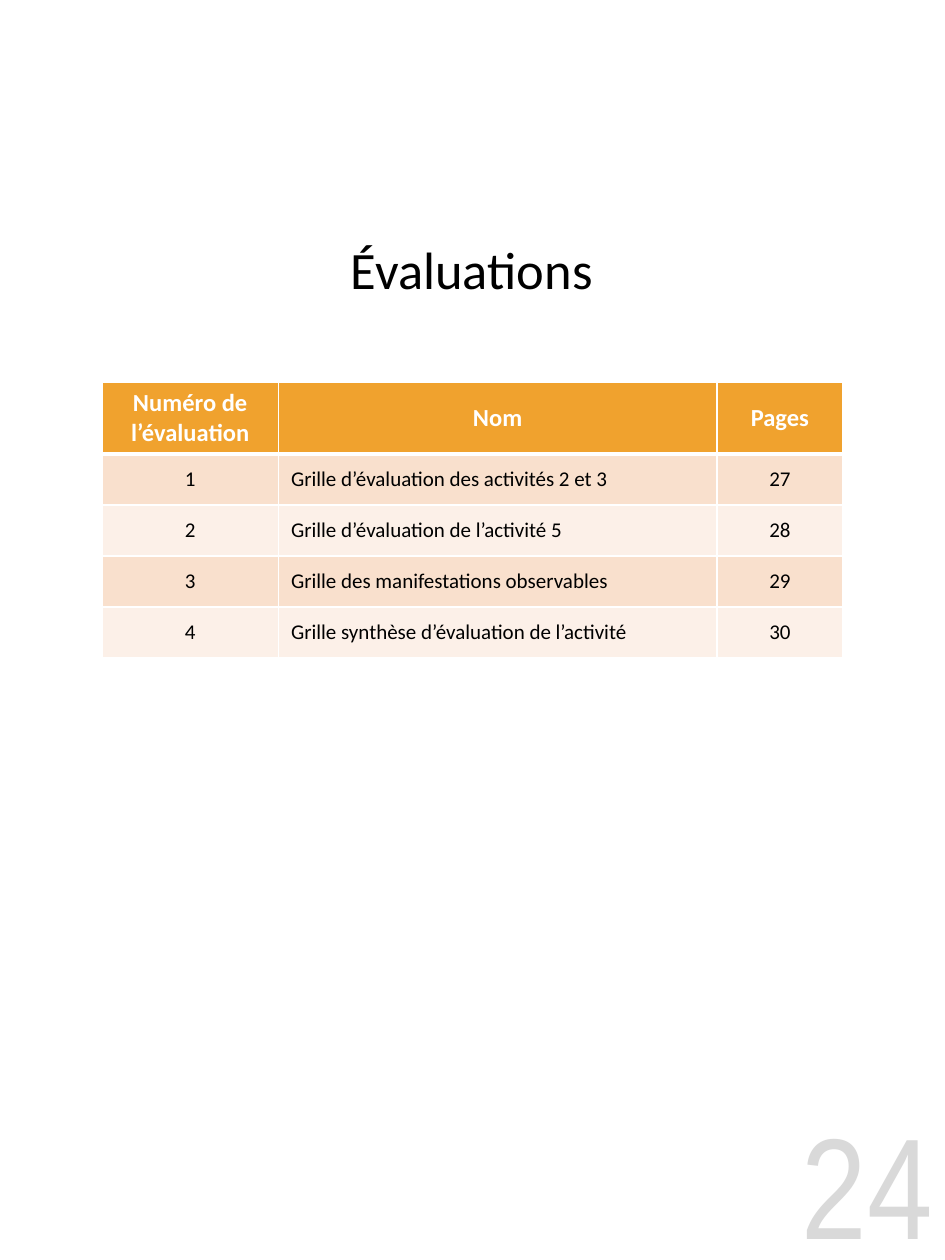
from lxml.etree import SubElement
from pptx import Presentation
from pptx.dml.color import RGBColor
from pptx.enum.text import MSO_AUTO_SIZE, MSO_ANCHOR as Anchor, PP_ALIGN as Align
from pptx.oxml.ns import qn
from pptx.util import Pt

BLACK = RGBColor(0x00, 0x00, 0x00)
WHITE = RGBColor(0xFF, 0xFF, 0xFF)
ORANGE = RGBColor(0xF0, 0xA2, 0x2E)
PEACH = RGBColor(0xF9, 0xE0, 0xCD)
CREAM = RGBColor(0xFC, 0xF0, 0xE8)
GREY = RGBColor(0xD9, 0xD9, 0xD9)

TITLE = "Évaluations"
PAGE_NUMBER = "24"
ROWS = [
    ("Numéro de\nl’évaluation", "Nom", "Pages"),
    ("1", "Grille d’évaluation des activités 2 et 3", "27"),
    ("2", "Grille d’évaluation de l’activité 5", "28"),
    ("3", "Grille des manifestations observables", "29"),
    ("4", "Grille synthèse d’évaluation de l’activité", "30"),
]
NAME_COLUMN = 1
COLUMN_WIDTHS = [100.8, 250.56, 72]
HEADER_HEIGHT, ROW_HEIGHT = 41.04, 29.16
TABLE_LEFT, TABLE_TOP = 58.32, 218.16
TITLE_BOX = (101.52, 123.84, 336.24, 59.76)
NUMBER_BOX = (416.88, 630.72, 123.12, 89.28)

TITLE_FONT = {"name": "Calibri", "size": Pt(30), "bold": False}
HEADER_FONT = {"name": "Calibri", "size": Pt(14), "bold": True}
BODY_FONT = {"name": "Calibri", "size": Pt(12), "bold": False}
NUMBER_FONT = {"name": "Arial Narrow", "size": Pt(82), "bold": False}


def write(text_frame, text, font_format, color, alignment):
    text_frame.text = text
    for paragraph in text_frame.paragraphs:
        paragraph.alignment = alignment
        for name, value in font_format.items():
            setattr(paragraph.font, name, value)
        paragraph.font.color.rgb = color


def place(shape, box):
    for name, value in zip(("left", "top", "width", "height"), box):
        setattr(shape, name, Pt(value))
    frame = shape.text_frame
    frame.word_wrap = True
    frame.auto_size = MSO_AUTO_SIZE.NONE
    frame.vertical_anchor = Anchor.MIDDLE


def add_borders(cell, widths):
    properties = cell._tc.get_or_add_tcPr()
    for side, width in widths.items():
        line = SubElement(properties, qn(f"a:ln{side}"), w=str(Pt(width)))
        fill = SubElement(line, qn("a:solidFill"))
        SubElement(fill, qn("a:srgbClr"), val=str(WHITE))


def add_evaluation_table(slide):
    heights = [HEADER_HEIGHT] + [ROW_HEIGHT] * (len(ROWS) - 1)
    table = slide.shapes.add_table(
        len(ROWS), len(COLUMN_WIDTHS), Pt(TABLE_LEFT), Pt(TABLE_TOP),
        Pt(sum(COLUMN_WIDTHS)), Pt(sum(heights))).table
    for column, width in zip(table.columns, COLUMN_WIDTHS):
        column.width = Pt(width)
    for r, (row, height) in enumerate(zip(ROWS, heights)):
        table.rows[r].height = Pt(height)
        header = r == 0
        fill = ORANGE if header else PEACH if r % 2 else CREAM
        for c, text in enumerate(row):
            cell = table.cell(r, c)
            cell.vertical_anchor = Anchor.MIDDLE
            add_borders(cell, {"L": 1, "R": 1, "T": 3 if r == 1 else 1,
                               "B": 3 if header else 1})
            cell.fill.solid()
            cell.fill.fore_color.rgb = fill
            left = c == NAME_COLUMN and not header
            write(cell.text_frame, text,
                  HEADER_FONT if header else BODY_FONT,
                  WHITE if header else BLACK,
                  Align.LEFT if left else Align.CENTER)


def main():
    presentation = Presentation()
    presentation.slide_width, presentation.slide_height = Pt(540), Pt(720)
    slide = presentation.slides.add_slide(presentation.slide_layouts[5])

    title = slide.shapes.title
    place(title, TITLE_BOX)
    write(title.text_frame, TITLE, TITLE_FONT, BLACK, Align.CENTER)

    add_evaluation_table(slide)

    number = slide.shapes.add_textbox(*map(Pt, NUMBER_BOX))
    place(number, NUMBER_BOX)
    write(number.text_frame, PAGE_NUMBER, NUMBER_FONT, GREY, Align.RIGHT)

    presentation.save("out.pptx")


if __name__ == "__main__":
    main()
